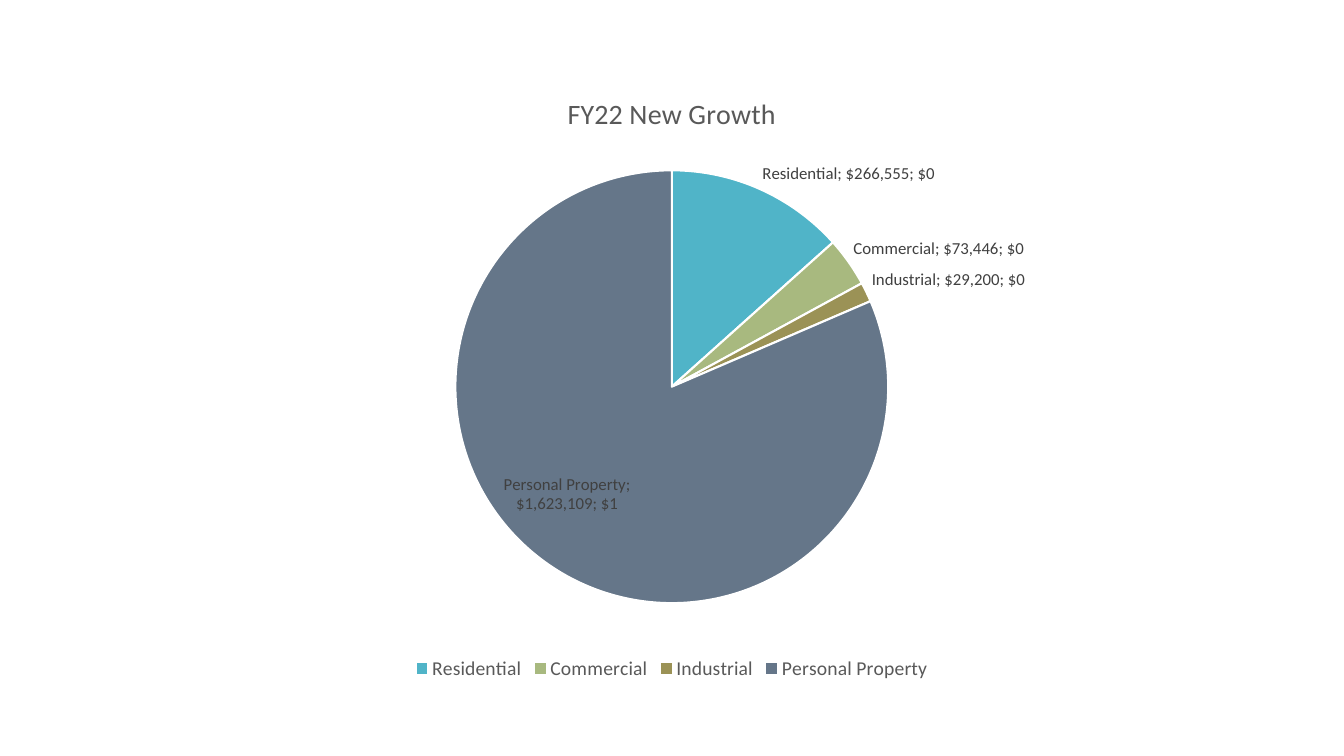
"""Build the FY22 New Growth pie chart slide."""
from lxml.etree import SubElement
from pptx import Presentation
from pptx.chart.data import CategoryChartData
from pptx.dml.color import RGBColor
from pptx.enum.chart import XL_CHART_TYPE, XL_LABEL_POSITION, XL_LEGEND_POSITION
from pptx.oxml import parse_xml
from pptx.oxml.ns import nsdecls, qn
from pptx.util import Cm, Pt

HEADING = "FY22 New Growth"
GROWTH = [
    ("Residential", 266555, "50B4C8"),
    ("Commercial", 73446, "A8B97F"),
    ("Industrial", 29200, "9B9256"),
    ("Personal Property", 1623109, "657689"),
]
SLIDE_SIZE = Cm(33.87), Cm(19.05)
CHART_BOX = Cm(1.78), Cm(1.78), Cm(30.3), Cm(15.47)
PIE_BOX = {"x": 0.32, "y": 0.16, "w": 0.36, "h": 0.71}
LEGEND_FORMAT = {"position": XL_LEGEND_POSITION.BOTTOM, "include_in_layout": False}
LABEL_FORMAT = {
    "show_value": True,
    "show_category_name": True,
    "show_percentage": True,
    "number_format": '"$"#,##0',
    "number_format_is_linked": False,
    "position": XL_LABEL_POSITION.BEST_FIT,
}


def color(value):
    return RGBColor.from_string(value)


def apply(target, settings):
    for attribute, value in settings.items():
        setattr(target, attribute, value)


def style_font(font, size, shade):
    apply(font, {"name": "Calibri", "size": Pt(size), "bold": False})
    font.color.rgb = color(shade)


def place_pie(chart):
    plot_area = chart.plots[0]._element.getparent()
    for old_layout in plot_area.findall(qn("c:layout")):
        plot_area.remove(old_layout)
    layout = parse_xml(f"<c:layout {nsdecls('c')}/>")
    manual = SubElement(layout, qn("c:manualLayout"))
    settings = {"layoutTarget": "inner", "xMode": "edge", "yMode": "edge", **PIE_BOX}
    for tag, value in settings.items():
        SubElement(manual, qn(f"c:{tag}")).set("val", str(value))
    plot_area.insert(0, layout)


def style_labels(labels):
    apply(labels, LABEL_FORMAT)
    style_font(labels.font, 12, "404040")
    separator = parse_xml(f"<c:separator {nsdecls('c')}>; </c:separator>")
    labels._element.find(qn("c:showPercent")).addnext(separator)
    bubble_size = labels._element.find(qn("c:showBubbleSize"))
    if bubble_size is not None:
        bubble_size.addnext(separator)


def add_growth_chart(slide):
    growth = CategoryChartData(number_format='"$"#,##0')
    names, amounts, shades = zip(*GROWTH)
    growth.categories = names
    growth.add_series(HEADING, amounts)
    chart = slide.shapes.add_chart(XL_CHART_TYPE.PIE, *CHART_BOX, growth).chart
    style_font(chart.font, 10, "000000")

    chart.has_title = True
    heading = chart.chart_title.text_frame
    heading.text = HEADING
    style_font(heading.paragraphs[0].runs[0].font, 20, "595959")

    chart.has_legend = True
    apply(chart.legend, LEGEND_FORMAT)
    style_font(chart.legend.font, 14, "595959")

    pie = chart.plots[0]
    pie.vary_by_categories = True
    series = pie.series[0]
    for index, shade in enumerate(shades):
        wedge = series.points[index].format
        wedge.fill.solid()
        wedge.fill.fore_color.rgb = color(shade)
        wedge.line.color.rgb = color("FFFFFF")
        wedge.line.width = Pt(1.5)
    style_labels(series.data_labels)
    place_pie(chart)


def main():
    deck = Presentation()
    deck.slide_width, deck.slide_height = SLIDE_SIZE
    slide = deck.slides.add_slide(deck.slide_layouts[6])
    add_growth_chart(slide)
    deck.save("out.pptx")


if __name__ == "__main__":
    main()
